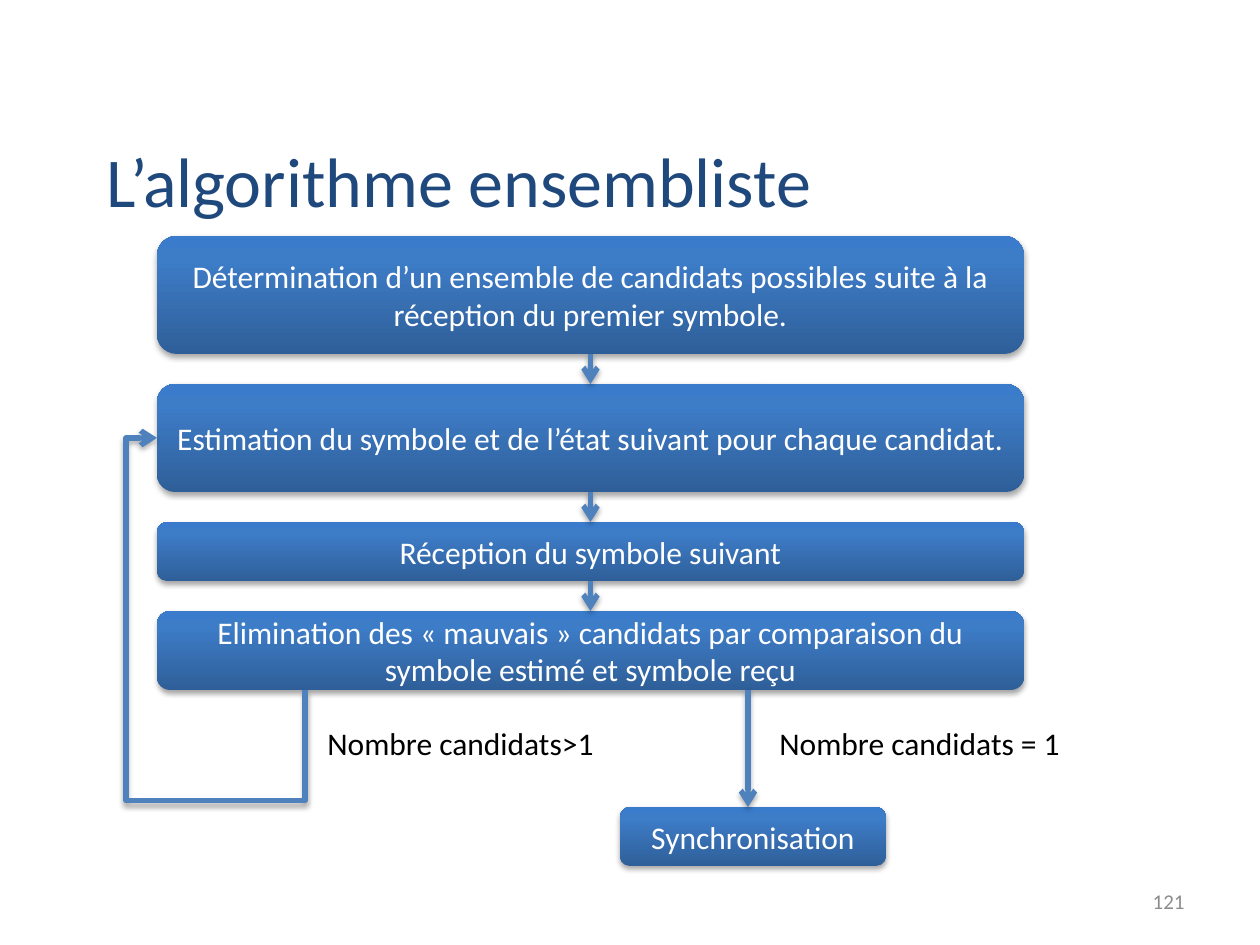
import pptx
import pptx.util
import pptx.dml.color
import pptx.enum.shapes
import pptx.enum.text
import pptx.oxml
import pptx.oxml.ns

PX = 914400 / 126
FONT = "Calibri"
COLORS = {
    "title": "1F497D", "white": "FFFFFF", "black": "000000", "number": "8C8C8C",
    "line": "4F81BD", "dark": "2F5F99", "middle": "3D7CC7", "light": "3A7CCB",
}
ALIGN = pptx.enum.text.PP_ALIGN
ANCHOR = pptx.enum.text.MSO_ANCHOR
CONNECTOR = pptx.enum.shapes.MSO_CONNECTOR
NS = pptx.oxml.ns.nsdecls("a")


def px(value):
    return pptx.util.Emu(round(value * PX))


def rgb(name):
    return pptx.dml.color.RGBColor.from_string(COLORS[name])


def write(shape, text, size=18, color="black", align=ALIGN.LEFT, anchor=ANCHOR.TOP):
    frame = shape.text_frame
    frame.word_wrap = True
    frame.vertical_anchor = anchor
    para = frame.paragraphs[0]
    para.alignment = align
    span = para.add_run()
    span.text = text
    span.font.name = FONT
    span.font.size = pptx.util.Pt(size)
    span.font.color.rgb = rgb(color)


def add_shadow(properties):
    properties.append(pptx.oxml.parse_xml(
        f'<a:effectLst {NS}><a:outerShdw blurRad="40000" dist="23000" dir="5400000" '
        f'rotWithShape="0"><a:srgbClr val="{COLORS["black"]}"><a:alpha val="35000"/>'
        '</a:srgbClr></a:outerShdw></a:effectLst>'))


class Flowchart:
    def __init__(self, page):
        self.page = page

    def label(self, left, top, width, height, text, **style):
        box = self.page.shapes.add_textbox(px(left), px(top), px(width), px(height))
        write(box, text, **style)

    def step(self, left, top, width, height, text):
        box = self.page.shapes.add_shape(
            pptx.enum.shapes.MSO_SHAPE.ROUNDED_RECTANGLE,
            px(left), px(top), px(width), px(height))
        stops = "".join(
            f'<a:gs pos="{position * 1000}"><a:srgbClr val="{COLORS[name]}"/></a:gs>'
            for position, name in ((0, "dark"), (80, "middle"), (100, "light")))
        properties = box.element.spPr
        properties.insert(2, pptx.oxml.parse_xml(
            f'<a:gradFill {NS} rotWithShape="1"><a:gsLst>{stops}</a:gsLst>'
            '<a:lin ang="16200000" scaled="0"/></a:gradFill>'))
        box.line.fill.background()
        add_shadow(properties)
        write(box, text, color="white", align=ALIGN.CENTER, anchor=ANCHOR.MIDDLE)
        return box

    def arrow(self, start, end, kind=CONNECTOR.STRAIGHT):
        line = self.page.shapes.add_connector(kind, *map(px, start + end))
        line.line.color.rgb = rgb("line")
        line.line.width = pptx.util.Pt(3)
        line.line._get_or_add_ln().append(
            pptx.oxml.parse_xml(f'<a:tailEnd {NS} type="arrow"/>'))
        add_shadow(line.element.spPr)
        return line

    def link(self, upper, lower):
        line = self.arrow((0, 0), (0, 0))
        line.begin_connect(upper, 2)
        line.end_connect(lower, 0)

    def loop(self, start, end, target, drop, reach):
        across, rise = start[0] - end[0], start[1] - end[1]
        left = (start[0] + end[0] - rise) / 2
        top = (start[1] + end[1] - across) / 2
        line = self.arrow((left, top + across), (left + rise, top), CONNECTOR.ELBOW)
        line.end_connect(target, 1)
        line.left, line.top = px(left), px(top)
        line.width, line.height = px(rise), px(across)
        properties = line.element.spPr
        properties.xfrm.set("rot", "16200000")
        geometry = properties.find(pptx.oxml.ns.qn("a:prstGeom"))
        geometry.set("prst", "bentConnector4")
        first = round(-drop / rise * 100000)
        second = round((across + reach) / across * 100000)
        guides = "".join(f'<a:gd name="adj{index}" fmla="val {value}"/>'
                         for index, value in enumerate((first, second), 1))
        for old in list(geometry):
            geometry.remove(old)
        geometry.append(pptx.oxml.parse_xml(f"<a:avLst {NS}>{guides}</a:avLst>"))


def main():
    deck = pptx.Presentation()
    deck.slide_width, deck.slide_height = px(1260), px(945)
    chart = Flowchart(deck.slides.add_slide(deck.slide_layouts[6]))
    chart.label(94, 78, 1071, 203, "L’algorithme ensembliste",
                size=40, color="title", anchor=ANCHOR.MIDDLE)

    left, top, width, gap = 157, 236, 867, 30
    steps = []
    for height, text in (
        (118, "Détermination d’un ensemble de candidats possibles suite à la "
              "réception du premier symbole."),
        (108, "Estimation du symbole et de l’état suivant pour chaque candidat."),
        (59, "Réception du symbole suivant"),
        (79, "Elimination des « mauvais » candidats par comparaison du "
             "symbole estimé et symbole reçu"),
    ):
        steps.append(chart.step(left, top, width, height, text))
        top += height + gap
    bottom = top - gap
    for upper, lower in zip(steps, steps[1:]):
        chart.link(upper, lower)

    chart.step(620, 807, 266, 59, "Synchronisation")
    chart.arrow((748, bottom), (748, 807))
    chart.loop((305, bottom), (left, 438), steps[1], drop=111, reach=31)
    for label_left, text in ((315, "Nombre candidats>1"), (767, "Nombre candidats = 1")):
        chart.label(label_left, 718, 335, 50, text)
    chart.label(903, 876, 294, 50, "121", size=12, color="number",
                align=ALIGN.RIGHT, anchor=ANCHOR.MIDDLE)
    deck.save("out.pptx")


if __name__ == "__main__":
    main()
